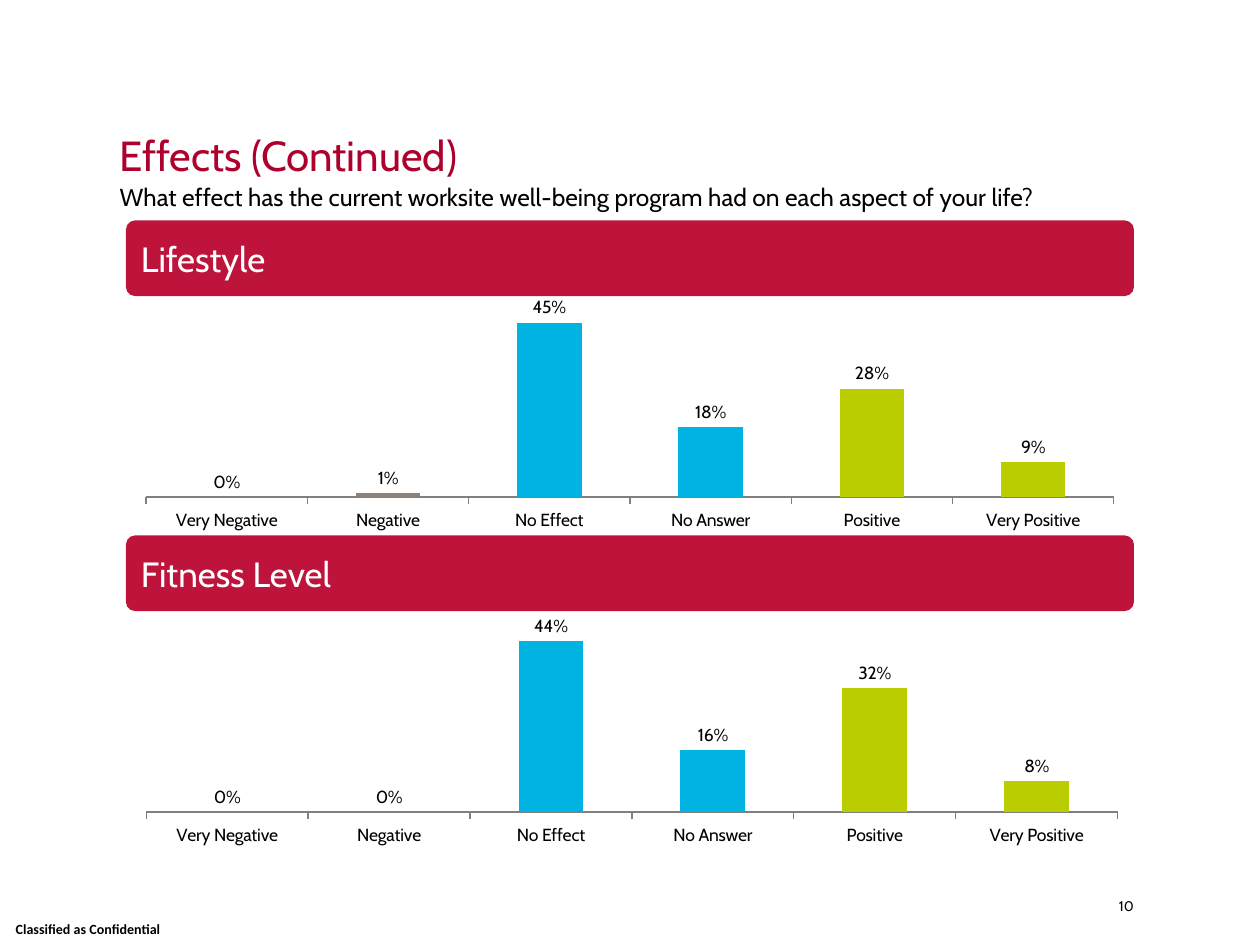
from dataclasses import dataclass

from lxml import etree
from pptx import Presentation
from pptx.chart.data import CategoryChartData
from pptx.dml.color import RGBColor
from pptx.enum import chart as ch, shapes as sh, text as tx
from pptx.oxml.ns import qn
from pptx.util import Pt


@dataclass(frozen=True)
class Theme:
    font: str = "Cabin"
    mark: str = "Calibri"
    title: str = "AE002C"
    band: str = "BE143C"
    ink: str = "000000"
    pale: str = "FFFFFF"
    axis: str = "808080"
    bad: str = "8D827A"
    none: str = "00B3E3"
    good: str = "B9CD00"
    big: float = 24
    head: float = 20
    lead: float = 14
    label: float = 10
    small: float = 8


@dataclass(frozen=True)
class Box:
    x: float
    y: float
    w: float
    h: float

    def pts(self) -> tuple:
        return Pt(self.x), Pt(self.y), Pt(self.w), Pt(self.h)


@dataclass(frozen=True)
class Panel:
    name: str
    top: float
    wide: float
    vals: tuple


T = Theme()
LEFT, BAND_W, BAND_H, PLOT_H = 72, 576, 43.2, 136.8
CATS = ("Very Negative", "Negative", "No Effect",
        "No Answer", "Positive", "Very Positive")
TINTS = (T.bad, T.bad, T.none, T.none, T.good, T.good)
PANELS = (
    Panel("Lifestyle", 126, 576, (0, 0.01, 0.45, 0.18, 0.28, 0.09)),
    Panel("Fitness Level", 306, 578.2, (0, 0, 0.44, 0.16, 0.32, 0.08)),
)


def rgb(code: str) -> RGBColor:
    return RGBColor.from_string(code)


def style(font, size: float, color: str, face: str = T.font) -> None:
    font.size, font.name = Pt(size), face
    font.color.rgb = rgb(color)


def write(shape, words: str, size: float, color: str, face: str = T.font,
          align=tx.PP_ALIGN.LEFT, anchor=tx.MSO_ANCHOR.TOP, pad: bool = False):
    """Fill a shape with one styled line and return its paragraph."""
    frame = shape.text_frame
    frame.text = words
    frame.word_wrap = True
    frame.auto_size = tx.MSO_AUTO_SIZE.NONE
    frame.vertical_anchor = anchor
    if not pad:
        frame.margin_left = frame.margin_right = 0
        frame.margin_top = frame.margin_bottom = 0
    para = frame.paragraphs[0]
    para.alignment = align
    style(para.runs[0].font, size, color, face)
    return para


def place(shape, box: Box) -> None:
    shape.left, shape.top, shape.width, shape.height = box.pts()


def add_band(slide, panel: Panel) -> None:
    box = Box(LEFT, panel.top, BAND_W, BAND_H)
    band = slide.shapes.add_shape(
        sh.MSO_SHAPE.ROUNDED_RECTANGLE, *box.pts())
    band.adjustments[0] = 0.12
    band.shadow.inherit = False
    band.fill.solid()
    band.fill.fore_color.rgb = rgb(T.band)
    band.line.fill.background()
    para = write(band, panel.name, T.head, T.pale,
                 anchor=tx.MSO_ANCHOR.MIDDLE, pad=True)
    para.space_before, para.space_after = Pt(8), Pt(9)


def set_plot(chart, box: Box) -> None:
    """Fix the inner plot area, as fractions of the chart."""
    area = chart.element.find(".//" + qn("c:plotArea"))
    for old in area.findall(qn("c:layout")):
        area.remove(old)
    lay = etree.Element(qn("c:layout"))
    man = etree.SubElement(lay, qn("c:manualLayout"))
    for tag, val in (("layoutTarget", "inner"), ("xMode", "edge"),
                     ("yMode", "edge"), ("x", box.x), ("y", box.y),
                     ("w", box.w), ("h", box.h)):
        etree.SubElement(man, qn("c:" + tag)).set("val", str(val))
    area.insert(0, lay)


def add_bars(slide, panel: Panel) -> None:
    data = CategoryChartData(number_format="0%")
    data.categories = CATS
    data.add_series("Series 1", panel.vals)
    box = Box(LEFT, panel.top + BAND_H, panel.wide, PLOT_H)
    chart = slide.shapes.add_chart(
        ch.XL_CHART_TYPE.COLUMN_CLUSTERED, *box.pts(), data).chart
    chart.has_title = chart.has_legend = False
    style(chart.font, T.label, T.ink)

    val = chart.value_axis
    val.minimum_scale, val.maximum_scale = 0, 0.5
    val.has_major_gridlines = val.visible = False
    cat = chart.category_axis
    cat.major_tick_mark = ch.XL_TICK_MARK.OUTSIDE
    cat.format.line.color.rgb = rgb(T.axis)
    cat.format.line.width = Pt(0.75)

    plot = chart.plots[0]
    plot.gap_width, plot.vary_by_categories = 150, False
    bars = plot.series[0]
    bars.format.fill.solid()
    bars.format.fill.fore_color.rgb = rgb(T.band)
    for i, tint in enumerate(TINTS):
        fill = bars.points[i].format.fill
        fill.solid()
        fill.fore_color.rgb = rgb(tint)
    tags = bars.data_labels
    tags.show_value = True
    tags.number_format, tags.number_format_is_linked = "0%", False
    tags.position = ch.XL_LABEL_POSITION.OUTSIDE_END
    style(tags.font, T.label, T.ink)
    set_plot(chart, Box(0.02, 0.03, 0.96, 0.81))


def add_heads(slide) -> None:
    title, body = slide.shapes.title, slide.placeholders[1]
    place(title, Box(68.4, 49, 576, 54))
    para = write(title, "Effects (Continued)", T.big, T.title,
                 anchor=tx.MSO_ANCHOR.BOTTOM)
    para.line_spacing = 0.9

    place(body, Box(68.4, 100.8, 597, 21.6))
    para = write(body, "What effect has the current worksite well-being "
                 "program had on each aspect of your life?", T.lead, T.ink)
    para.line_spacing = 1.2
    para.space_before = para.space_after = Pt(9)
    props = para._p.get_or_add_pPr()
    props.set("marL", "0")
    props.set("indent", "0")
    etree.SubElement(props, qn("a:buNone"))


def add_foot(slide) -> None:
    mark = slide.shapes.add_textbox(*Box(0, 522, 100.8, 18).pts())
    para = write(mark, "Classified as Confidential", T.small, T.ink, T.mark,
                 tx.PP_ALIGN.CENTER, tx.MSO_ANCHOR.MIDDLE)
    para.runs[0].font.bold = True
    page = slide.shapes.add_textbox(*Box(612.7, 512.6, 35.3, 27.4).pts())
    write(page, "10", T.small, T.ink, align=tx.PP_ALIGN.RIGHT)


def main() -> None:
    deck = Presentation()
    deck.slide_width, deck.slide_height = Pt(720), Pt(540)
    slide = deck.slides.add_slide(deck.slide_layouts[1])
    add_heads(slide)
    add_foot(slide)
    for panel in PANELS:
        add_band(slide, panel)
        add_bars(slide, panel)
    deck.save("out.pptx")


if __name__ == "__main__":
    main()
